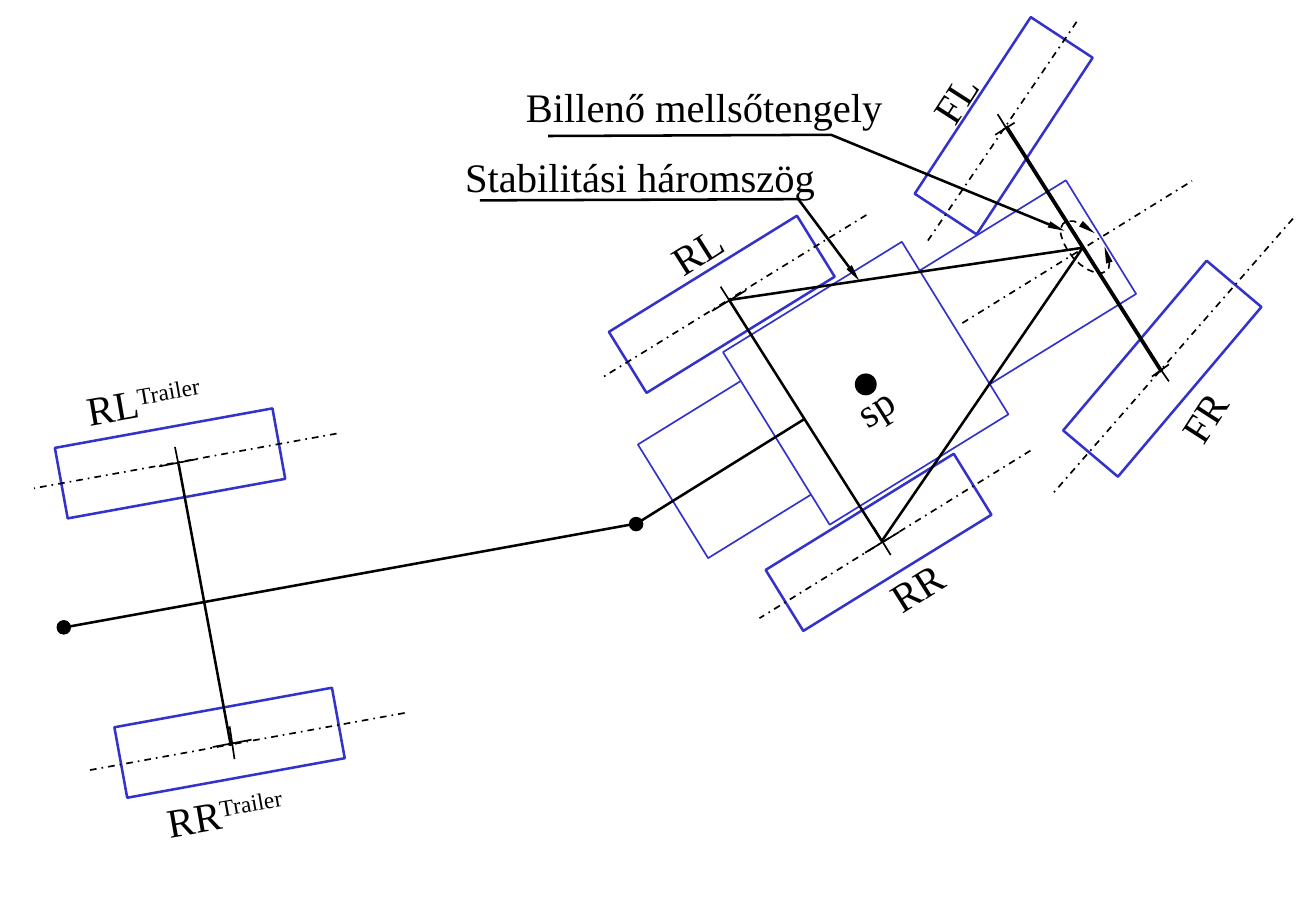
import pptx
import pptx.util
import pptx.dml.color
import pptx.enum.dml
import pptx.enum.shapes
import pptx.enum.text
import pptx.oxml
import pptx.oxml.ns

BLACK = pptx.dml.color.RGBColor(0, 0, 0)
WHITE = pptx.dml.color.RGBColor(255, 255, 255)
BLUE = pptx.dml.color.RGBColor(0x33, 0x33, 0xCC)
SHAPE = pptx.enum.shapes.MSO_SHAPE
DASH = pptx.enum.dml.MSO_LINE.DASH
DASH_DOT = pptx.enum.dml.MSO_LINE.DASH_DOT
FONT = "Times New Roman"
WIDE, HIGH = 10.83, 7.5

BODY = [
    (5.23, 2.49, 4.14, 1.1, 328.3, None),
    (6.26, 2.32, 1.73, 1.67, 328.3, WHITE),
]
WHEELS = [
    (5.03, 2.21, 1.82, 0.59, 328.3, None),
    (6.32, 4.17, 1.82, 0.59, 328.3, None),
    (7.39, 0.73, 1.74, 0.61, 303.3, None),
    (8.65, 2.74, 1.83, 0.59, 310.2, None),
    (0.49, 3.52, 1.82, 0.59, 349.7, None),
    (0.98, 5.82, 1.82, 0.59, 349.7, None),
]
DOTS = [(5.18, 4.26, 0.11), (7.04, 3.08, 0.17), (0.47, 5.11, 0.11)]
TICKS = [
    (5.93, 2.36, 6.07, 2.58), (5.86, 2.56, 6.14, 2.39),
    (7.19, 4.34, 7.33, 4.57), (7.12, 4.55, 7.4, 4.38),
    (8.19, 1.11, 8.35, 1.01), (8.21, 0.94, 8.34, 1.15),
    (9.48, 2.94, 9.62, 3.14), (9.48, 3.1, 9.62, 3),
    (1.44, 3.68, 1.49, 3.93), (1.31, 3.84, 1.62, 3.78),
    (1.89, 5.98, 1.93, 6.25), (1.75, 6.15, 2.07, 6.09),
]
AXES = [
    (7.92, 2.66, 9.81, 1.49), (7.13, 1.77, 4.97, 3.1),
    (8.48, 3.71, 6.25, 5.09), (8.86, 0.18, 7.63, 1.99),
    (10.64, 1.8, 8.65, 4.08), (2.77, 3.57, 0.28, 4.02),
    (3.33, 5.87, 0.74, 6.34),
]
FRAME = [
    (0.56, 5.16, 5.24, 4.31), (1.47, 3.82, 1.9, 6.14),
    (5.24, 4.31, 6.62, 3.45), (6, 2.47, 7.26, 4.46),
    (8.91, 2.04, 7.26, 4.45), (6, 2.47, 8.91, 2.04),
]
LINES = [
    (TICKS, 1, None),
    (AXES, 1, DASH_DOT),
    (FRAME, 1.5, None),
    ([(8.28, 1.04, 9.56, 3.06)], 2.25, None),
    ([(8.84, 1.91, 8.98, 2.14)], 1, DASH),
]
LABELS = [
    ("RL", "Trailer", 0.61, 3.04, 1.23, 350.1),
    ("RR", "Trailer", 1.27, 6.43, 1.25, 350.1),
    ("RL", "", 5.42, 1.81, 0.63, 327.6),
    ("RR", "", 7.22, 4.58, 0.65, 327.6),
    ("FL", "", 7.56, 0.56, 0.59, 302.8),
    ("FR", "", 9.6, 3.18, 0.61, 302.8),
    ("sp", "", 6.95, 3.09, 0.5, 327.6),
    ("Billenő mellsőtengely", "", 4.23, 0.63, 3.16, 0),
    ("Stabilitási háromszög", "", 3.73, 1.2, 3.11, 0),
]
LEADERS = [
    [(3.95, 1.65), (6.57, 1.64), (7.07, 2.31)],
    [(4.51, 1.12), (6.84, 1.11), (8.76, 1.9)],
]
SWING = [
    (9.09, 2.03), (9.14, 2.12), (9.14, 2.2), (9.11, 2.23),
    (9.05, 2.28), (8.93, 2.23), (8.83, 2.12),
    (8.74, 2.01), (8.7, 1.89), (8.75, 1.84),
    (8.8, 1.79), (8.91, 1.83), (9.01, 1.92),
]

deck = pptx.Presentation()
deck.slide_width = pptx.util.Inches(WIDE)
deck.slide_height = pptx.util.Inches(HIGH)
slide = deck.slides.add_slide(deck.slide_layouts[6])
shapes = slide.shapes


def spots(*sizes):
    return [pptx.util.Inches(size) for size in sizes]


def stroke(item, color, width, dash=None):
    item.line.color.rgb = color
    item.line.width = pptx.util.Pt(width)
    if dash:
        item.line.dash_style = dash


def add_form(kind, box, turn, fill, color, width):
    form = shapes.add_shape(kind, *spots(*box))
    form.rotation = turn
    form.shadow.inherit = False
    if fill is None:
        form.fill.background()
    else:
        form.fill.solid()
        form.fill.fore_color.rgb = fill
    stroke(form, color, width)


def add_line(ends, width, dash):
    line = shapes.add_connector(pptx.enum.shapes.MSO_CONNECTOR.STRAIGHT, *spots(*ends))
    stroke(line, BLACK, width, dash)
    line._element.spPr.append(pptx.oxml.parse_xml(
        "<a:effectLst %s/>" % pptx.oxml.ns.nsdecls("a")))


def add_path(points, width, dash, tips):
    places = [spots(*point) for point in points]
    maker = shapes.build_freeform(*places[0])
    maker.add_line_segments(places[1:], close=False)
    form = maker.convert_to_shape()
    form.fill.background()
    form.shadow.inherit = False
    stroke(form, BLACK, width, dash)
    for tip in tips:
        form.line._get_or_add_ln().append(pptx.oxml.parse_xml(
            '<a:%s %s type="triangle" w="sm" len="lg"/>'
            % (tip, pptx.oxml.ns.nsdecls("a"))))


def bend(points, steps=5):
    curve = [points[0]]
    for first in range(0, len(points) - 1, 3):
        a, b, c, d = points[first:first + 4]
        for step in range(1, steps + 1):
            t = step / steps
            s = 1 - t
            curve.append(tuple(
                s**3 * a[k] + 3 * s * s * t * b[k] + 3 * s * t * t * c[k] + t**3 * d[k]
                for k in range(2)))
    return curve


def add_label(text, raised, left, top, width, turn):
    box = shapes.add_textbox(*spots(left, top, width, 0.5))
    box.rotation = turn
    frame = box.text_frame
    frame.word_wrap = False
    frame.auto_size = pptx.enum.text.MSO_AUTO_SIZE.SHAPE_TO_FIT_TEXT
    para = frame.paragraphs[0]
    para.font.name = FONT
    para.font.size = pptx.util.Pt(24)
    para.font.color.rgb = BLACK
    para.add_run().text = text
    if raised:
        run = para.add_run()
        run.text = raised
        run._r.get_or_add_rPr().set("baseline", "30000")


for group, width in ((BODY, 1), (WHEELS, 1.5)):
    for *box, turn, fill in group:
        add_form(SHAPE.RECTANGLE, box, turn, fill, BLUE, width)
for group, width, dash in LINES:
    for ends in group:
        add_line(ends, width, dash)
for left, top, size in DOTS:
    add_form(SHAPE.OVAL, (left, top, size, size), 0, BLACK, BLACK, 0.75)
for points in LEADERS:
    add_path(points, 1.5, None, ["tailEnd"])
add_path(bend(SWING), 1, DASH, ["headEnd", "tailEnd"])
for label in LABELS:
    add_label(*label)

deck.save("out.pptx")
